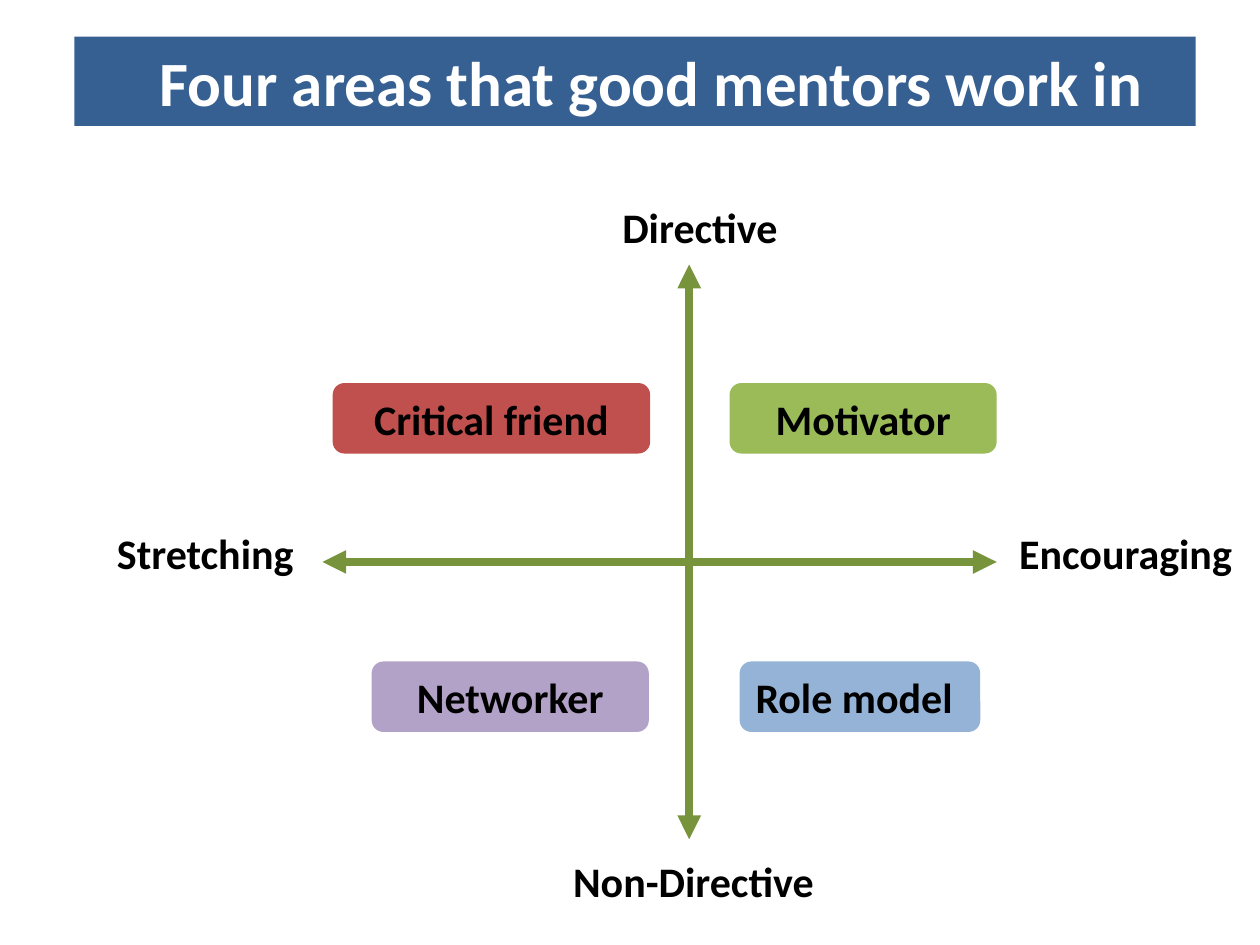
from lxml import etree
from pptx import Presentation
from pptx import util as u
from pptx.dml.color import RGBColor
from pptx.enum import shapes, text
from pptx.oxml import ns

BLACK = RGBColor(0x00, 0x00, 0x00)
WHITE = RGBColor(0xFF, 0xFF, 0xFF)
NAVY = RGBColor(0x37, 0x60, 0x92)
OLIVE = RGBColor(0x77, 0x93, 0x3C)
RED = RGBColor(0xC0, 0x50, 0x4D)
GREEN = RGBColor(0x9B, 0xBB, 0x59)
BLUE = RGBColor(0x95, 0xB3, 0xD7)
MAUVE = RGBColor(0xB3, 0xA2, 0xC7)
FONT = "Calibri"
CELL = u.Inches(0.1)
MID_X, MID_Y = 46.4, 29.1
AXES = [(MID_X, 5.5, MID_X, 51.1), (17.3, MID_Y, 70.8, MID_Y)]
LABELS = [
    ("Directive", 40.1, 0, 15.8),
    ("Non-Directive", 36.2, 51.9, 23.3),
    ("Encouraging", 71.6, 25.9, 20.1),
    ("Stretching", 0, 25.9, 16.5),
]
ROLES = [
    ("Critical friend", RED, 18.1, 14.9, 25.2, 1),
    ("Motivator", GREEN, 49.6, 14.9, 21.2, 1),
    ("Role model", BLUE, 50.4, 37, 19.1, 1.9),
    ("Networker", MAUVE, 21.2, 37, 22, 1),
]


def grid(box, *spots):
    """Turn column and row pairs inside a box into slide lengths."""
    return [int((box[i % 2] + spot) * CELL) for i, spot in enumerate(spots)]


def size(*cells):
    """Turn counts of cells into lengths."""
    return [int(count * CELL) for count in cells]


def write(shape, words, points, color, align):
    """Put one bold line of words into a shape."""
    frame = shape.text_frame
    frame.text = words
    frame.word_wrap = True
    frame.auto_size = text.MSO_AUTO_SIZE.NONE
    frame.vertical_anchor = text.MSO_ANCHOR.MIDDLE
    para = frame.paragraphs[0]
    para.alignment = align
    para.font.name = FONT
    para.font.size = u.Pt(points)
    para.font.bold = True
    para.font.color.rgb = color


def draw_head(slide, box):
    """Fill the box with the title banner."""
    title = slide.shapes.title
    title.left, title.top, title.width, title.height = size(*box)
    title.fill.solid()
    title.fill.fore_color.rgb = NAVY
    write(title, "Four areas that good mentors work in", 36, WHITE,
          text.PP_ALIGN.CENTER)
    title.text_frame.margin_left = u.Inches(0.36)


def draw_axis(slide, box, ends):
    """Draw one axis with an arrowhead at both ends."""
    axis = slide.shapes.add_connector(
        shapes.MSO_CONNECTOR.STRAIGHT, *grid(box, *ends))
    axis.line.color.rgb = OLIVE
    axis.line.width = u.Pt(4.5)
    line = axis.line._get_or_add_ln()
    for tag in ("a:headEnd", "a:tailEnd"):
        etree.SubElement(line, ns.qn(tag), type="triangle")
    etree.SubElement(axis._element.spPr, ns.qn("a:effectLst"))


def draw_map(slide, box):
    """Draw the axes, their labels and the four roles."""
    for ends in AXES:
        draw_axis(slide, box, ends)
    for words, col, row, wide in LABELS:
        label = slide.shapes.add_textbox(*grid(box, col, row), *size(wide, 5))
        write(label, words, 24, BLACK, text.PP_ALIGN.LEFT)
    for words, color, col, row, wide, inset in ROLES:
        role = slide.shapes.add_shape(
            shapes.MSO_SHAPE.ROUNDED_RECTANGLE,
            *grid(box, col, row), *size(wide, 5.6))
        role.shadow.inherit = False
        role.fill.solid()
        role.fill.fore_color.rgb = color
        role.line.fill.background()
        write(role, words, 24, BLACK, text.PP_ALIGN.CENTER)
        role.text_frame.margin_right = int(inset * CELL)


def main():
    """Build and save the slide."""
    deck = Presentation()
    deck.slide_width, deck.slide_height = size(100, 75)
    slide = deck.slides.add_slide(deck.slide_layouts.get_by_name("Title Only"))
    draw_map(slide, (8.3, 15.5))
    draw_head(slide, (5.9, 2.9, 89, 7.1))
    deck.save("out.pptx")


if __name__ == "__main__":
    main()
